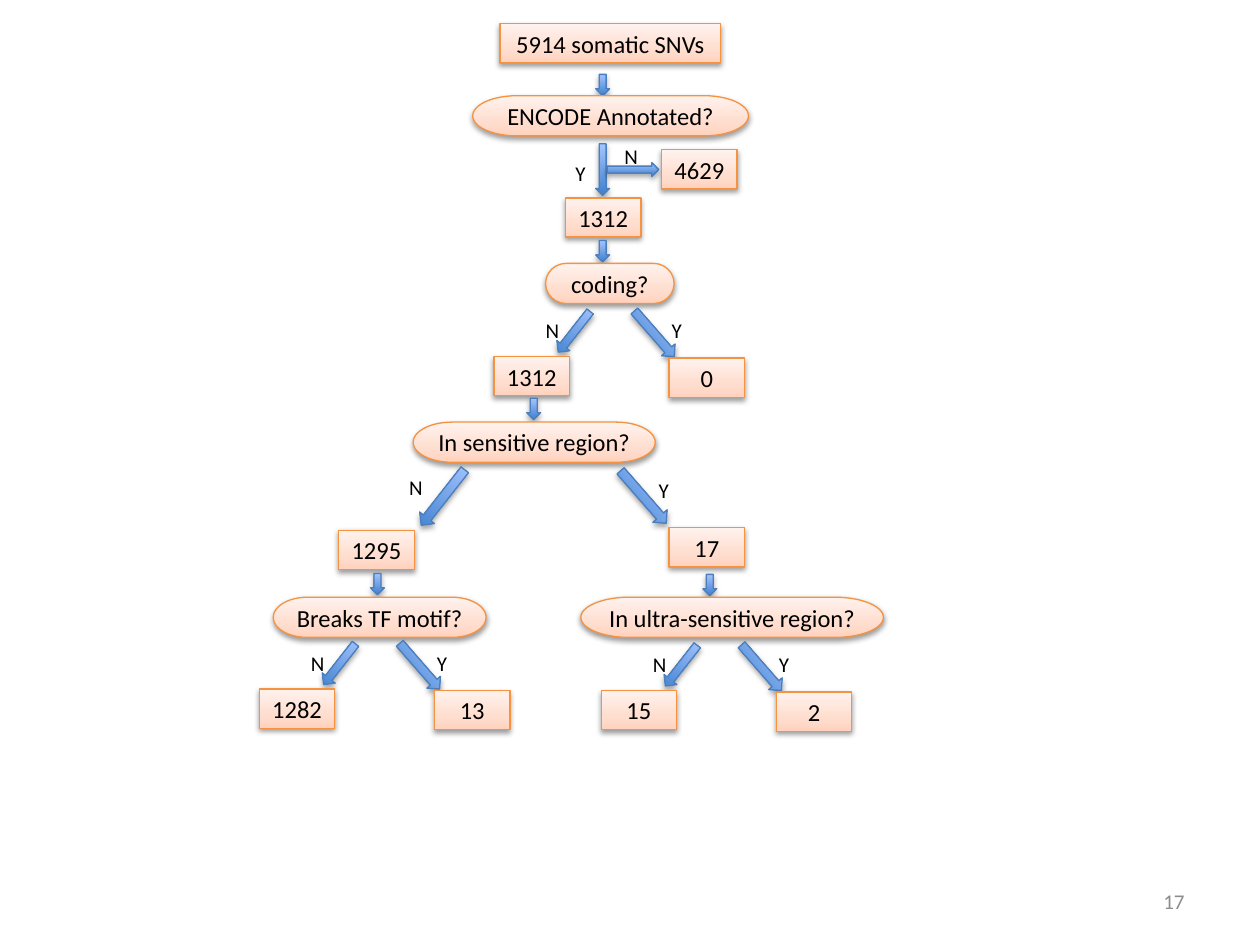
from lxml import etree
from pptx import Presentation
from pptx import util as u
from pptx.dml.color import RGBColor
from pptx.enum import shapes, text
from pptx.oxml.ns import qn

COLORS = {
    "node_line": "F69240", "arrow_line": "4B7EBC", "shadow": "000000",
    "text": "000000", "number": "8C8C8C",
}
# Gradient stops run from the bottom of a shape to its top: percent, colour
NODE_STOPS = [(0, "FFD2BD"), (35, "FFDED0"), (100, "FFF2ED")]
ARROW_STOPS = [(0, "3F80CE"), (100, "A4C4FF")]
FONT = "Calibri"
SHAPE = shapes.MSO_SHAPE
ALIGN = text.PP_ALIGN


def add_color(parent, color, alpha=None):
    clr = etree.SubElement(parent, qn("a:srgbClr"), val=color)
    if alpha is not None:
        etree.SubElement(clr, qn("a:alpha"), val=str(alpha * 1000))


class Flowchart:
    def __init__(self, slide):
        self.slide = slide

    def shape(self, kind, x, y, w, h, stops, line, shadow_alpha, shadow_dist):
        sp = self.slide.shapes.add_shape(kind, u.Cm(x), u.Cm(y), u.Cm(w), u.Cm(h))
        sp.line.color.rgb = RGBColor.from_string(COLORS[line])
        sp.line.width = u.Pt(0.75)
        sp.fill.gradient()
        sp.fill.gradient_angle = 90
        stop_list = sp._element.spPr.find(".//" + qn("a:gsLst"))
        for old in list(stop_list):
            stop_list.remove(old)
        for pos, color in stops:
            add_color(etree.SubElement(stop_list, qn("a:gs"), pos=str(pos * 1000)), color)
        sp.shadow.inherit = False
        effects = sp._element.spPr.find(qn("a:effectLst"))
        shadow = etree.SubElement(
            effects, qn("a:outerShdw"), blurRad=str(u.Pt(3.1)),
            dist=str(u.Pt(shadow_dist)), dir="5400000", rotWithShape="0")
        add_color(shadow, COLORS["shadow"], shadow_alpha)
        return sp

    def put_text(self, sp, words, size, color="text", align=ALIGN.CENTER):
        tf = sp.text_frame
        tf.text = words
        p = tf.paragraphs[0]
        p.alignment = align
        r = p.runs[0]
        r.font.name = FONT
        r.font.size = u.Pt(size)
        r.font.color.rgb = RGBColor.from_string(COLORS[color])
        return tf

    def node(self, kind, words, x, y, w, h):
        sp = self.shape(kind, x, y, w, h, NODE_STOPS, "node_line", 38, 1.6)
        tf = self.put_text(sp, words, 14)
        tf.word_wrap = False
        tf.vertical_anchor = text.MSO_ANCHOR.MIDDLE

    def count(self, words, x, y, w=1.52):
        self.node(SHAPE.FLOWCHART_PROCESS, words, x, y, w, 0.79)

    def question(self, words, x, y, w):
        self.node(SHAPE.FLOWCHART_TERMINATOR, words, x, y, w, 0.81)

    def arrow(self, kind, x, y, w, h, rotation=0):
        sp = self.shape(kind, x, y, w, h, ARROW_STOPS, "arrow_line", 35, 1.8)
        sp.rotation = rotation

    def down(self, x, y, length=0.43):
        self.arrow(SHAPE.DOWN_ARROW, x, y, 0.28, length)

    def no_arrow(self, x, y, w=0.33, length=1.04):
        self.arrow(SHAPE.DOWN_ARROW, x, y, w, length, 38.1)

    def yes_arrow(self, x, y, length=1.22, h=0.36):
        self.arrow(SHAPE.RIGHT_ARROW, x, y, length, h, 48.9)

    def textbox(self, words, x, y, w, h, color="text", align=ALIGN.LEFT):
        sp = self.slide.shapes.add_textbox(u.Cm(x), u.Cm(y), u.Cm(w), u.Cm(h))
        return self.put_text(sp, words, 12, color, align)

    def label(self, words, x, y):
        self.textbox(words, x, y, 0.66, 0.76)

    def split(self, no, yes, x, y):
        """Draw both answers of a question; x, y is the corner of the N count."""
        self.no_arrow(x + 1.45, y - 1.02)
        self.label("N", x + 0.79, y - 0.91)
        self.yes_arrow(x + 2.62, y - 0.64)
        self.label("Y", x + 3.33, y - 0.91)
        self.count(no, x, y)
        self.count(yes, x + 3.53, y + 0.03)


def main():
    prs = Presentation()
    prs.slide_width, prs.slide_height = u.Cm(25.4), u.Cm(19.05)
    chart = Flowchart(prs.slides.add_slide(prs.slide_layouts[6]))

    chart.count("5914 somatic SNVs", 10.08, 0.48, 4.45)
    chart.down(12.01, 1.5)
    chart.question("ENCODE Annotated?", 9.53, 1.93, 5.56)
    chart.down(12.01, 2.9, 1.04)
    chart.label("Y", 11.35, 3.12)
    chart.arrow(SHAPE.RIGHT_ARROW, 12.24, 3.28, 1.04, 0.28)
    chart.label("N", 12.34, 2.77)
    chart.count("1312", 11.4, 3.99)
    chart.count("4629", 13.34, 3.02)

    chart.down(12.01, 4.85)
    chart.question("coding?", 11, 5.31, 2.59)
    chart.split("1312", "0", 9.96, 7.19)

    chart.down(10.62, 8.03)
    chart.question("In sensitive region?", 8.33, 8.51, 4.88)
    chart.no_arrow(8.74, 9.32, 0.38, 1.42)
    chart.label("N", 8, 9.45)
    chart.yes_arrow(12.27, 9.83, 1.4, 0.38)
    chart.label("Y", 13.03, 9.5)
    chart.count("1295", 6.83, 10.69)
    chart.count("17", 13.49, 10.64)

    chart.down(7.47, 11.56)
    chart.question("Breaks TF motif?", 5.51, 12.04, 4.29)
    chart.split("1282", "13", 5.23, 13.89)

    chart.down(14.17, 11.58)
    chart.question("In ultra-sensitive region?", 11.71, 12.04, 6.1)
    chart.split("15", "2", 12.12, 13.92)

    number = chart.textbox("17", 18.2, 17.66, 5.93, 1.01, "number", ALIGN.RIGHT)
    number.word_wrap = True
    number.vertical_anchor = text.MSO_ANCHOR.MIDDLE
    prs.save("out.pptx")


if __name__ == "__main__":
    main()
